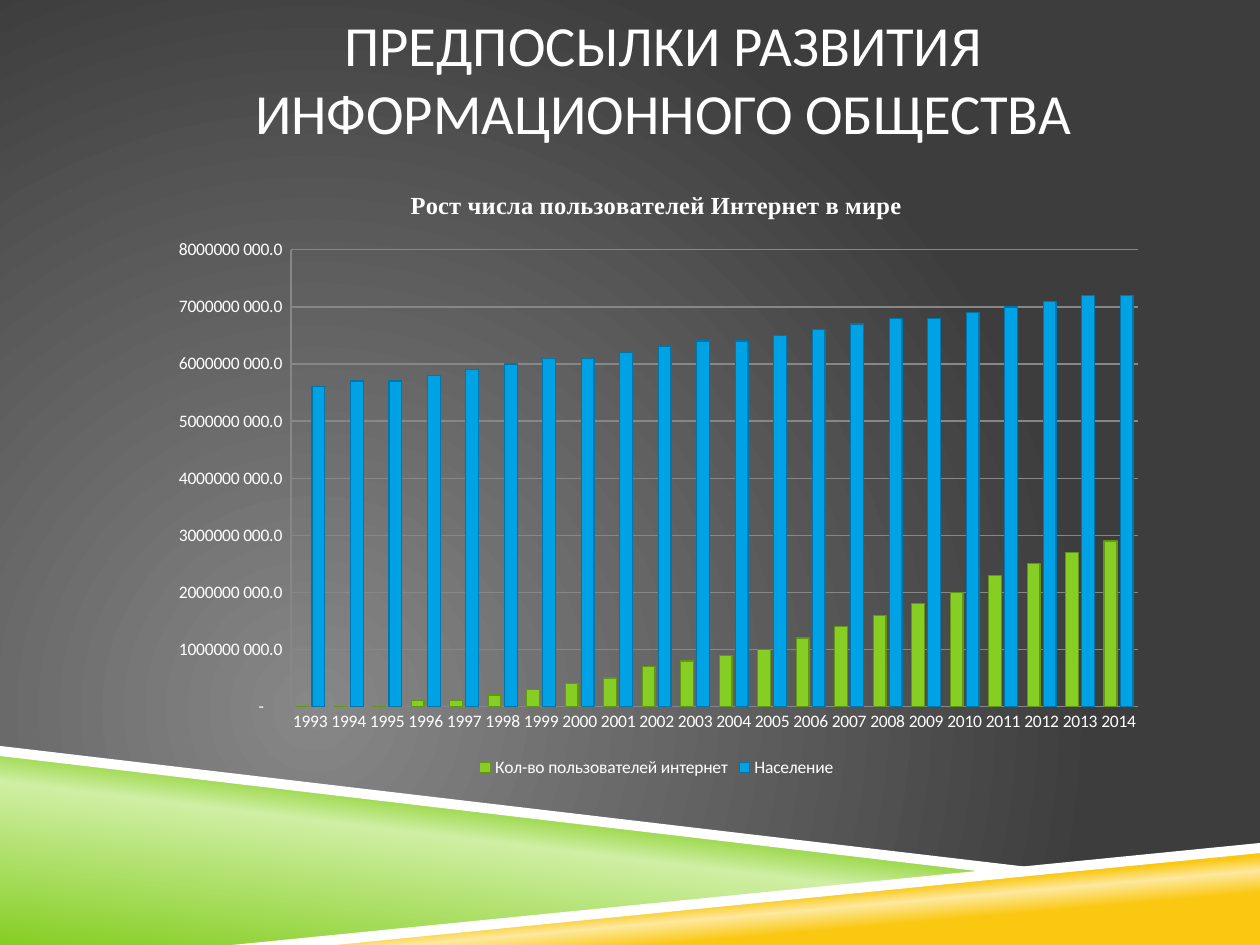
from lxml import etree
from pptx import Presentation
from pptx.chart.data import CategoryChartData
from pptx.dml.color import RGBColor
from pptx.enum.chart import XL_CHART_TYPE as ChartType
from pptx.enum.chart import XL_LEGEND_POSITION as LegendPosition
from pptx.enum.chart import XL_TICK_MARK as TickMark
from pptx.enum.text import MSO_ANCHOR, PP_ALIGN
from pptx.oxml.ns import qn
from pptx.util import Inches, Pt

WHITE = RGBColor(0xFF, 0xFF, 0xFF)
GREEN = RGBColor(0x86, 0xCE, 0x24)
LIGHT_GREEN = RGBColor(0xCF, 0xEF, 0xA4)
DARK_GREEN = RGBColor(0x61, 0x97, 0x17)
YELLOW = RGBColor(0xFA, 0xC8, 0x10)
LIGHT_YELLOW = RGBColor(0xFD, 0xE9, 0x9F)
BLUE = RGBColor(0x00, 0xA2, 0xE6)
DARK_BLUE = RGBColor(0x00, 0x76, 0xA9)
GRAY = RGBColor(0x87, 0x87, 0x87)
DARK_GRAY = RGBColor(0x3D, 0x3D, 0x3D)

HUNDRED_MILLION = 100_000_000
YEARS = range(1993, 2015)
# Hundreds of millions of people, one value per year
USERS = (0, 0, 0, 1, 1, 2, 3, 4, 5, 7, 8, 9, 10, 12, 14, 16, 18, 20, 23, 25, 27, 29)
POPULATION = (56, 57, 57, 58, 59, 60, 61, 61, 62, 63, 64,
              64, 65, 66, 67, 68, 68, 69, 70, 71, 72, 72)
NUMBER_FORMAT = r'_-* #\ ##0.0_-;\-* #\ ##0.0_-;_-* "-"??_-'


def set_gradient(fill, element, stops, angle=None):
    """Fill with (percent, colour) stops: linear at an angle, else circular."""
    fill.gradient()
    gradient = next(element.iter(qn("a:gradFill")))
    for child in list(gradient):
        gradient.remove(child)
    stop_list = etree.SubElement(gradient, qn("a:gsLst"))
    for percent, color in stops:
        stop = etree.SubElement(stop_list, qn("a:gs"), pos=str(percent * 1000))
        etree.SubElement(stop, qn("a:srgbClr"), val=str(color))
    if angle is not None:
        etree.SubElement(gradient, qn("a:lin"), ang=str(angle * 60000), scaled="0")
    else:
        circle = etree.SubElement(gradient, qn("a:path"), {"path": "circle"})
        etree.SubElement(circle, qn("a:fillToRect"),
                         l="50000", t="100000", r="100000", b="50000")


def add_polygon(slide, points):
    """Draw a closed outline through points given in inches."""
    start, *others = [(Inches(x), Inches(y)) for x, y in points]
    builder = slide.shapes.build_freeform(*start)
    builder.add_line_segments(others, close=True)
    shape = builder.convert_to_shape()
    shape.shadow.inherit = False
    shape.line.fill.background()
    return shape


def add_gradient_wedge(slide, points, stops, angle):
    shape = add_polygon(slide, points)
    set_gradient(shape.fill, shape._element, stops, angle)


def add_white_band(slide, points):
    shape = add_polygon(slide, points)
    shape.fill.solid()
    shape.fill.fore_color.rgb = WHITE


def set_font(font, size, name="Calibri", bold=False):
    font.size = Pt(size)
    font.name = name
    font.bold = bold
    font.color.rgb = WHITE


def add_title(slide, text):
    box = slide.shapes.add_textbox(Inches(0.75), Inches(-0.01), Inches(9.03), Inches(1.25))
    text_frame = box.text_frame
    text_frame.word_wrap = True
    text_frame.vertical_anchor = MSO_ANCHOR.MIDDLE
    text_frame.margin_left = text_frame.margin_right = 0
    text_frame.text = text
    paragraph = text_frame.paragraphs[0]
    paragraph.alignment = PP_ALIGN.CENTER
    set_font(paragraph.runs[0].font, 32.4)


def style_line(line, color):
    line.color.rgb = color
    line.width = Pt(0.75)


def add_growth_chart(slide):
    data = CategoryChartData(number_format=NUMBER_FORMAT)
    data.categories = YEARS
    for name, counts in (("Кол-во пользователей интернет", USERS),
                         ("Население", POPULATION)):
        data.add_series(name, [count * HUNDRED_MILLION for count in counts])
    chart = slide.shapes.add_chart(ChartType.COLUMN_CLUSTERED, Inches(1.23), Inches(1.32),
                                   Inches(7.96), Inches(4.89), data).chart
    set_font(chart.font, 10)

    title_frame = chart.chart_title.text_frame
    title_frame.text = "Рост числа пользователей Интернет в мире"
    set_font(title_frame.paragraphs[0].runs[0].font, 14, "Times New Roman", bold=True)
    chart.chart_title.include_in_layout = False
    chart.has_legend = True
    chart.legend.position = LegendPosition.BOTTOM
    chart.legend.include_in_layout = False

    for axis in (chart.category_axis, chart.value_axis):
        axis.major_tick_mark = axis.minor_tick_mark = TickMark.NONE
        style_line(axis.format.line, GRAY)
    value_axis = chart.value_axis
    value_axis.minimum_scale = 0
    value_axis.maximum_scale = 80 * HUNDRED_MILLION
    value_axis.major_unit = 10 * HUNDRED_MILLION
    value_axis.tick_labels.number_format = NUMBER_FORMAT
    value_axis.tick_labels.number_format_is_linked = False
    style_line(value_axis.major_gridlines.format.line, GRAY)

    plot = chart.plots[0]
    plot.gap_width = 75
    plot.overlap = -25
    plot.vary_by_categories = False
    for series, (color, outline) in zip(plot.series, ((GREEN, DARK_GREEN), (BLUE, DARK_BLUE))):
        series.format.fill.solid()
        series.format.fill.fore_color.rgb = color
        style_line(series.format.line, outline)


def main():
    presentation = Presentation()
    presentation.slide_width = Inches(10)
    presentation.slide_height = Inches(7.5)
    slide = presentation.slides.add_slide(presentation.slide_layouts[6])
    set_gradient(slide.background.fill, slide._element, [(0, GRAY), (100, DARK_GRAY)])

    add_gradient_wedge(slide, [(0, 5.97), (7.92, 6.92), (2, 7.5), (0, 7.5)],
                       [(0, GREEN), (52, LIGHT_GREEN), (66, GREEN)], 277)
    add_gradient_wedge(slide, [(1.98, 7.5), (10, 6.72), (10, 7.5)],
                       [(28, YELLOW), (40, LIGHT_YELLOW), (48, YELLOW)], 265)
    add_white_band(slide, [(0, 5.92), (0, 6), (7.9, 6.93), (8.32, 6.9)])
    add_white_band(slide, [(10, 6.69), (1.84, 7.5), (2.66, 7.5), (10, 6.77)])

    add_title(slide, "ПРЕДПОСЫЛКИ РАЗВИТИЯ ИНФОРМАЦИОННОГО ОБЩЕСТВА")
    add_growth_chart(slide)
    presentation.save("out.pptx")


if __name__ == "__main__":
    main()
